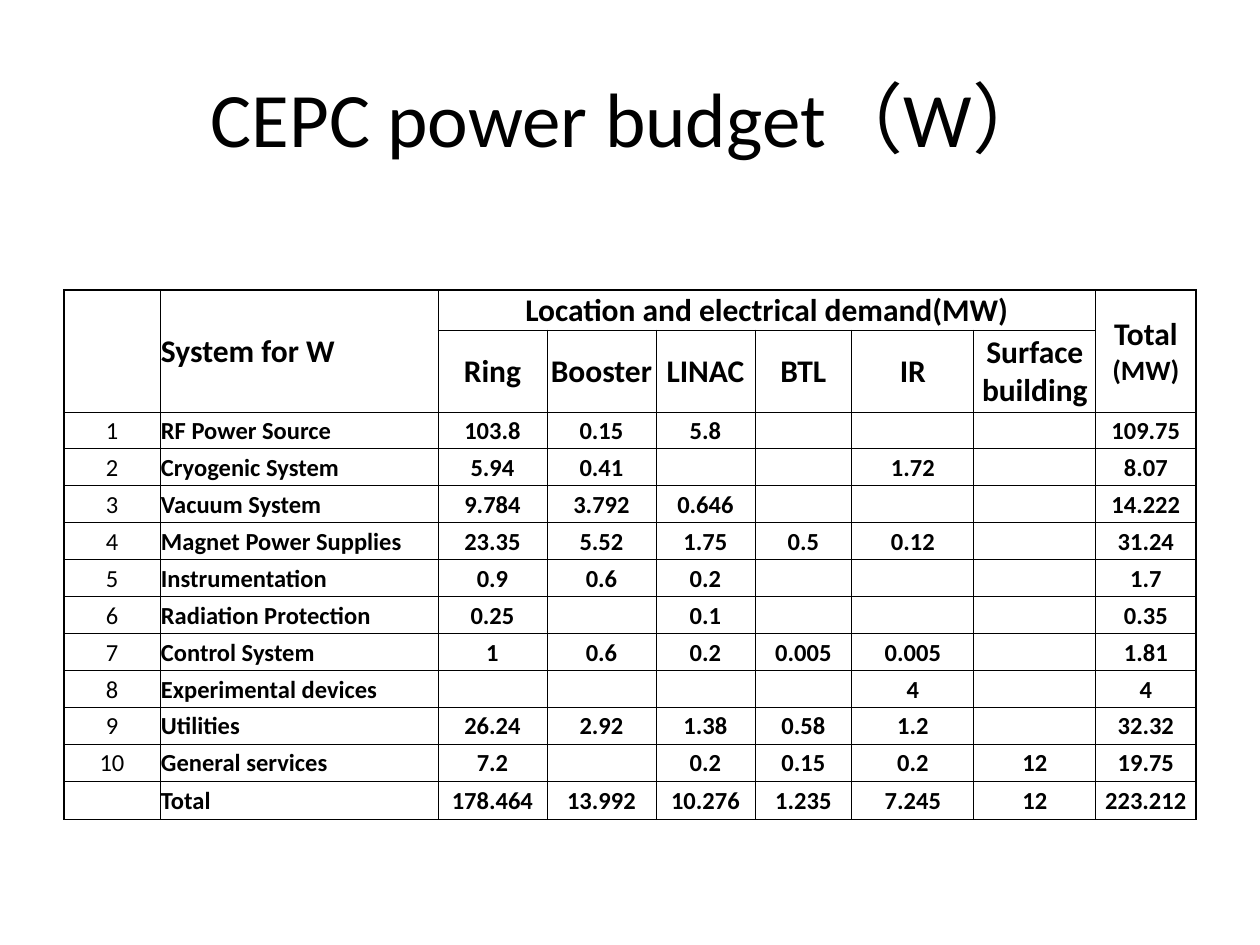
from dataclasses import dataclass

from lxml.etree import SubElement
from pptx import Presentation
from pptx.dml.color import RGBColor
from pptx.enum.text import MSO_ANCHOR, PP_ALIGN
from pptx.oxml.ns import qn
from pptx.table import Table, _Cell
from pptx.util import Emu, Pt

EMU_PER_PX = 914400 // 126
FONT = "Calibri"
BLACK, WHITE = "000000", "FFFFFF"
THIN, THICK = 0.5, 1

TABLE_LEFT, TABLE_TOP = 64, 290
COLUMN_WIDTHS = [96, 278, 109, 109, 99, 97, 122, 122, 100]
ROW_HEIGHTS = [40, 82] + [37] * 10 + [38]
LAST_ROW, LAST_COLUMN = len(ROW_HEIGHTS) - 1, len(COLUMN_WIDTHS) - 1
HEADER_ROWS = 2
LOCATIONS = ["Ring", "Booster", "LINAC", "BTL", "IR", "Surface building"]


@dataclass
class SystemDemand:
    name: str
    demands: list[str]
    total: str


SYSTEMS = [
    SystemDemand("RF Power Source", ["103.8", "0.15", "5.8", "", "", ""], "109.75"),
    SystemDemand("Cryogenic System", ["5.94", "0.41", "", "", "1.72", ""], "8.07"),
    SystemDemand("Vacuum System", ["9.784", "3.792", "0.646", "", "", ""], "14.222"),
    SystemDemand("Magnet Power Supplies", ["23.35", "5.52", "1.75", "0.5", "0.12", ""], "31.24"),
    SystemDemand("Instrumentation", ["0.9", "0.6", "0.2", "", "", ""], "1.7"),
    SystemDemand("Radiation Protection", ["0.25", "", "0.1", "", "", ""], "0.35"),
    SystemDemand("Control System", ["1", "0.6", "0.2", "0.005", "0.005", ""], "1.81"),
    SystemDemand("Experimental devices", ["", "", "", "", "4", ""], "4"),
    SystemDemand("Utilities", ["26.24", "2.92", "1.38", "0.58", "1.2", ""], "32.32"),
    SystemDemand("General services", ["7.2", "", "0.2", "0.15", "0.2", "12"], "19.75"),
    SystemDemand("Total", ["178.464", "13.992", "10.276", "1.235", "7.245", "12"], "223.212"),
]


def px(length: int) -> Emu:
    return Emu(length * EMU_PER_PX)


def color(value: str) -> RGBColor:
    return RGBColor.from_string(value)


def add_run(paragraph, text: str, size: int, bold: bool) -> None:
    run = paragraph.add_run()
    run.text = text
    run.font.color.rgb = color(BLACK)
    for name, value in {"name": FONT, "size": Pt(size), "bold": bold}.items():
        setattr(run.font, name, value)


def set_borders(cell: _Cell, row: int, column: int) -> None:
    """Draw thin cell lines, thick along the outside of the table."""
    outer_sides = {
        "a:lnL": column == 0,
        "a:lnR": column == LAST_COLUMN,
        "a:lnT": row == 0,
        "a:lnB": row == LAST_ROW,
    }
    properties = cell._tc.get_or_add_tcPr()
    for tag, is_outer in outer_sides.items():
        width = Pt(THICK if is_outer else THIN)
        line = SubElement(properties, qn(tag), w=str(width))
        fill = SubElement(line, qn("a:solidFill"))
        SubElement(fill, qn("a:srgbClr"), val=BLACK)


def format_cell(cell: _Cell, row: int, column: int) -> None:
    set_borders(cell, row, column)
    cell.fill.solid()
    cell.fill.fore_color.rgb = color(WHITE)
    cell_format = {
        "vertical_anchor": MSO_ANCHOR.MIDDLE,
        "margin_left": px(1),
        "margin_right": px(1),
        "margin_top": px(1),
        "margin_bottom": 0,
    }
    for name, value in cell_format.items():
        setattr(cell, name, value)


def write_cell(cell: _Cell, text: str, size: int, bold: bool = True, align=PP_ALIGN.CENTER) -> None:
    paragraph = cell.text_frame.paragraphs[0]
    paragraph.alignment = align
    if text:
        add_run(paragraph, text, size, bold)
    else:
        # The end mark keeps an empty cell from stretching its row.
        SubElement(paragraph._p, qn("a:endParaRPr"), sz=str(size * 100))


def fill_header(table: Table) -> None:
    write_cell(table.cell(0, 0), "", 14)
    write_cell(table.cell(0, 1), "System for W", 18, align=PP_ALIGN.LEFT)
    write_cell(table.cell(0, 2), "Location and electrical demand(MW)", 18)
    write_cell(table.cell(0, LAST_COLUMN), "Total ", 18)
    add_run(table.cell(0, LAST_COLUMN).text_frame.paragraphs[0], "(MW)", 16, True)
    for column, location in enumerate(LOCATIONS, start=2):
        write_cell(table.cell(1, column), location, 18)
    for column in (0, 1, LAST_COLUMN):
        table.cell(0, column).merge(table.cell(1, column))
    table.cell(0, 2).merge(table.cell(0, LAST_COLUMN - 1))


def fill_systems(table: Table) -> None:
    for row, system in enumerate(SYSTEMS, start=HEADER_ROWS):
        number = "" if row == LAST_ROW else str(row - HEADER_ROWS + 1)
        write_cell(table.cell(row, 0), number, 14, bold=False)
        write_cell(table.cell(row, 1), system.name, 14, align=PP_ALIGN.LEFT)
        for column, value in enumerate([*system.demands, system.total], start=2):
            write_cell(table.cell(row, column), value, 14)


def add_budget_table(slide) -> None:
    shape = slide.shapes.add_table(
        len(ROW_HEIGHTS), len(COLUMN_WIDTHS), px(TABLE_LEFT), px(TABLE_TOP),
        px(sum(COLUMN_WIDTHS)), px(sum(ROW_HEIGHTS)),
    )
    table = shape.table
    table.first_row = table.horz_banding = False
    for column, width in zip(table.columns, COLUMN_WIDTHS):
        column.width = px(width)
    for row, height in zip(table.rows, ROW_HEIGHTS):
        row.height = px(height)
    for row in range(len(ROW_HEIGHTS)):
        for column in range(len(COLUMN_WIDTHS)):
            format_cell(table.cell(row, column), row, column)
    fill_header(table)
    fill_systems(table)


def add_title(slide) -> None:
    title = slide.shapes.title
    position = {"left": 63, "top": 38, "width": 1134, "height": 157}
    for name, value in position.items():
        setattr(title, name, px(value))
    title.text_frame.vertical_anchor = MSO_ANCHOR.MIDDLE
    paragraph = title.text_frame.paragraphs[0]
    paragraph.alignment = PP_ALIGN.CENTER
    add_run(paragraph, "CEPC power budget（W）", 44, False)


def main() -> None:
    presentation = Presentation()
    presentation.slide_width = px(1260)
    presentation.slide_height = px(945)
    slide = presentation.slides.add_slide(presentation.slide_layouts[5])
    add_title(slide)
    add_budget_table(slide)
    presentation.save("out.pptx")


if __name__ == "__main__":
    main()
